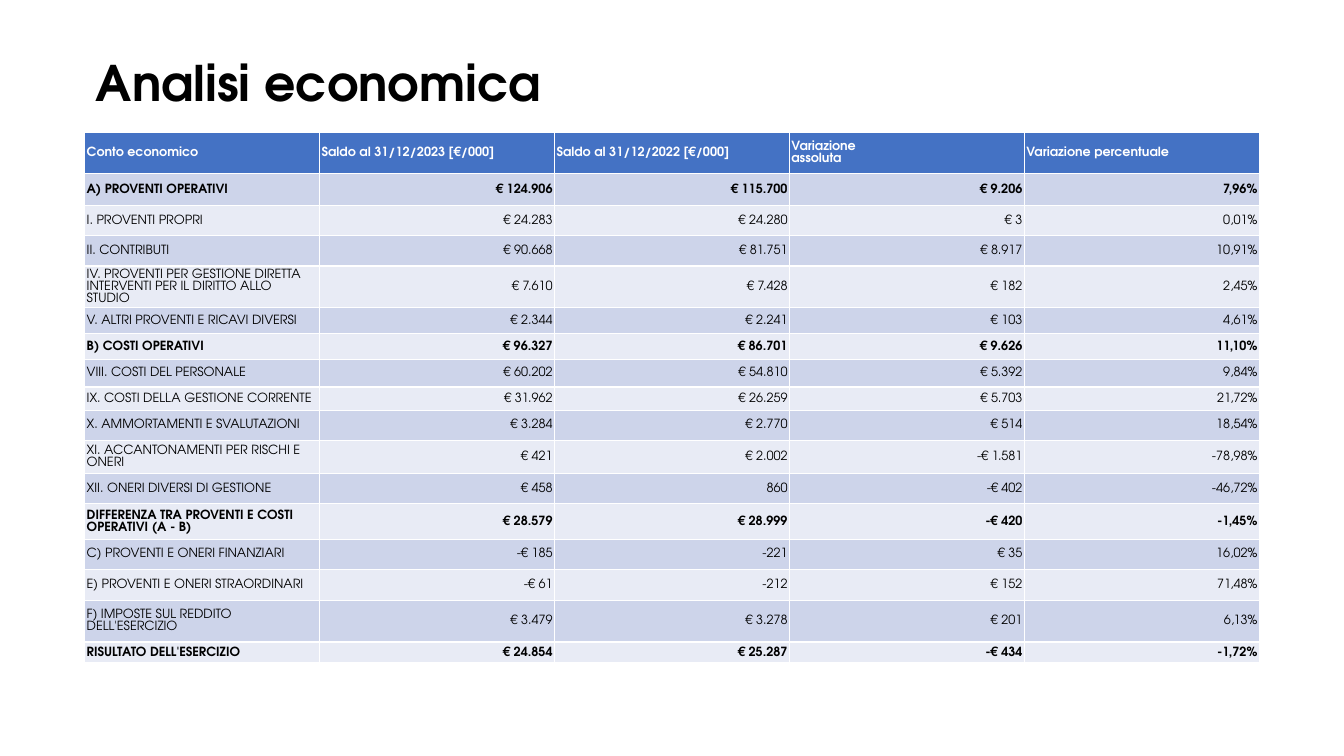
"""Build the income statement slide: a title and a table of balances."""
from dataclasses import dataclass

from pptx import Presentation
from pptx import util as u
from pptx.dml.color import RGBColor
from pptx.enum import text

FONT = "TeX Gyre Adventor"
COLS, ROWS = 1333, 750
UNIT = u.Inches(0.01)
LEFT, TOP, WIDE = 84, 131, 233


@dataclass
class Line:
    """One row of the table, with its height in grid rows."""
    high: int
    cells: tuple[str, ...]
    bold: bool = False


HEAD = Line(41, ("Conto economico", "Saldo al 31/12/2023 [€/000]",
                 "Saldo al 31/12/2022 [€/000]", "Variazione \vassoluta",
                 "Variazione percentuale"), True)
BODY = [
    Line(32, ("A) PROVENTI OPERATIVI", "€ 124.906", "€ 115.700", "€ 9.206", "7,96%"), True),
    Line(30, ("I. PROVENTI PROPRI", "€ 24.283", "€ 24.280", "€ 3", "0,01%")),
    Line(30, ("II. CONTRIBUTI", "€ 90.668", "€ 81.751", "€ 8.917", "10,91%")),
    Line(41, ("IV. PROVENTI PER GESTIONE DIRETTA INTERVENTI PER IL DIRITTO ALLO STUDIO",
              "€ 7.610", "€ 7.428", "€ 182", "2,45%")),
    Line(26, ("V. ALTRI PROVENTI E RICAVI DIVERSI", "€ 2.344", "€ 2.241", "€ 103", "4,61%")),
    Line(26, ("B) COSTI OPERATIVI", "€ 96.327", "€ 86.701", "€ 9.626", "11,10%"), True),
    Line(27, ("VIII. COSTI DEL PERSONALE", "€ 60.202", "€ 54.810", "€ 5.392", "9,84%")),
    Line(23, ("IX. COSTI DELLA GESTIONE CORRENTE", "€ 31.962", "€ 26.259", "€ 5.703", "21,72%")),
    Line(30, ("X. AMMORTAMENTI E SVALUTAZIONI", "€ 3.284", "€ 2.770", "€ 514", "18,54%")),
    Line(33, ("XI. ACCANTONAMENTI PER RISCHI E ONERI",
              "€ 421", "€ 2.002", "-€ 1.581", "-78,98%")),
    Line(30, ("XII. ONERI DIVERSI DI GESTIONE", "€ 458", "860", "-€ 402", "-46,72%")),
    Line(35, ("DIFFERENZA TRA PROVENTI E COSTI OPERATIVI (A - B)",
              "€ 28.579", "€ 28.999", "-€ 420", "-1,45%"), True),
    Line(30, ("C) PROVENTI E ONERI FINANZIARI", "-€ 185", "-221", "€ 35", "16,02%")),
    Line(31, ("E) PROVENTI E ONERI STRAORDINARI", "-€ 61", "-212", "€ 152", "71,48%")),
    Line(41, ("F) IMPOSTE SUL REDDITO DELL'ESERCIZIO",
              "€ 3.479", "€ 3.278", "€ 201", "6,13%")),
    Line(21, ("RISULTATO DELL'ESERCIZIO", "€ 24.854", "€ 25.287", "-€ 434", "-1,72%"), True),
]


def grid(*spans: int) -> list[int]:
    """Turn grid columns and rows into lengths."""
    return [span * UNIT for span in spans]


def hue(code: str) -> RGBColor:
    """Read a hex colour."""
    return RGBColor.from_string(code)


def write(frame, words: str, *, size: float, color: str = "000000", bold: bool = False,
          align=text.PP_ALIGN.LEFT, lead=None) -> None:
    """Put formatted text into a text frame."""
    frame.text = words
    frame.word_wrap = True
    for para in frame.paragraphs:
        para.alignment = align
        para.line_spacing = lead
        for run in para.runs:
            font = run.font
            font.name, font.size, font.bold = FONT, u.Pt(size), bold
            font.color.rgb = hue(color)


def fill(cell, words: str, *, back: str, **look) -> None:
    """Format one cell and write its text."""
    cell.margin_left = cell.margin_right = 2 * UNIT
    cell.margin_top = cell.margin_bottom = 0
    cell.vertical_anchor = text.MSO_ANCHOR.MIDDLE
    cell.fill.solid()
    cell.fill.fore_color.rgb = hue(back)
    write(cell.text_frame, words, size=9, lead=u.Pt(8.5), **look)


def draw(slide, lines: list[Line]) -> None:
    """Draw the table with a header row and banded rows."""
    count = len(HEAD.cells)
    high = sum(line.high for line in lines)
    table = slide.shapes.add_table(
        len(lines), count, *grid(LEFT, TOP, count * WIDE, high)).table
    for col in table.columns:
        col.width = WIDE * UNIT
    for i, line in enumerate(lines):
        table.rows[i].height = line.high * UNIT
        back = "4472C4" if i == 0 else ("E8EBF5", "CDD4EA")[i % 2]
        for j, words in enumerate(line.cells):
            right = i > 0 and j > 0
            fill(table.cell(i, j), words, back=back, bold=line.bold,
                 color="000000" if i else "FFFFFF",
                 align=text.PP_ALIGN.RIGHT if right else text.PP_ALIGN.LEFT)


def main() -> None:
    """Build and save the slide."""
    deck = Presentation()
    deck.slide_width, deck.slide_height = grid(COLS, ROWS)
    slide = deck.slides.add_slide(deck.slide_layouts[5])
    title = slide.shapes.title
    title.left, title.top, title.width, title.height = grid(85, 54, 1165, 109)
    title.text_frame.vertical_anchor = text.MSO_ANCHOR.TOP
    write(title.text_frame, "Analisi economica", size=35, bold=True, lead=0.9)
    draw(slide, [HEAD, *BODY])
    deck.save("out.pptx")


if __name__ == "__main__":
    main()
